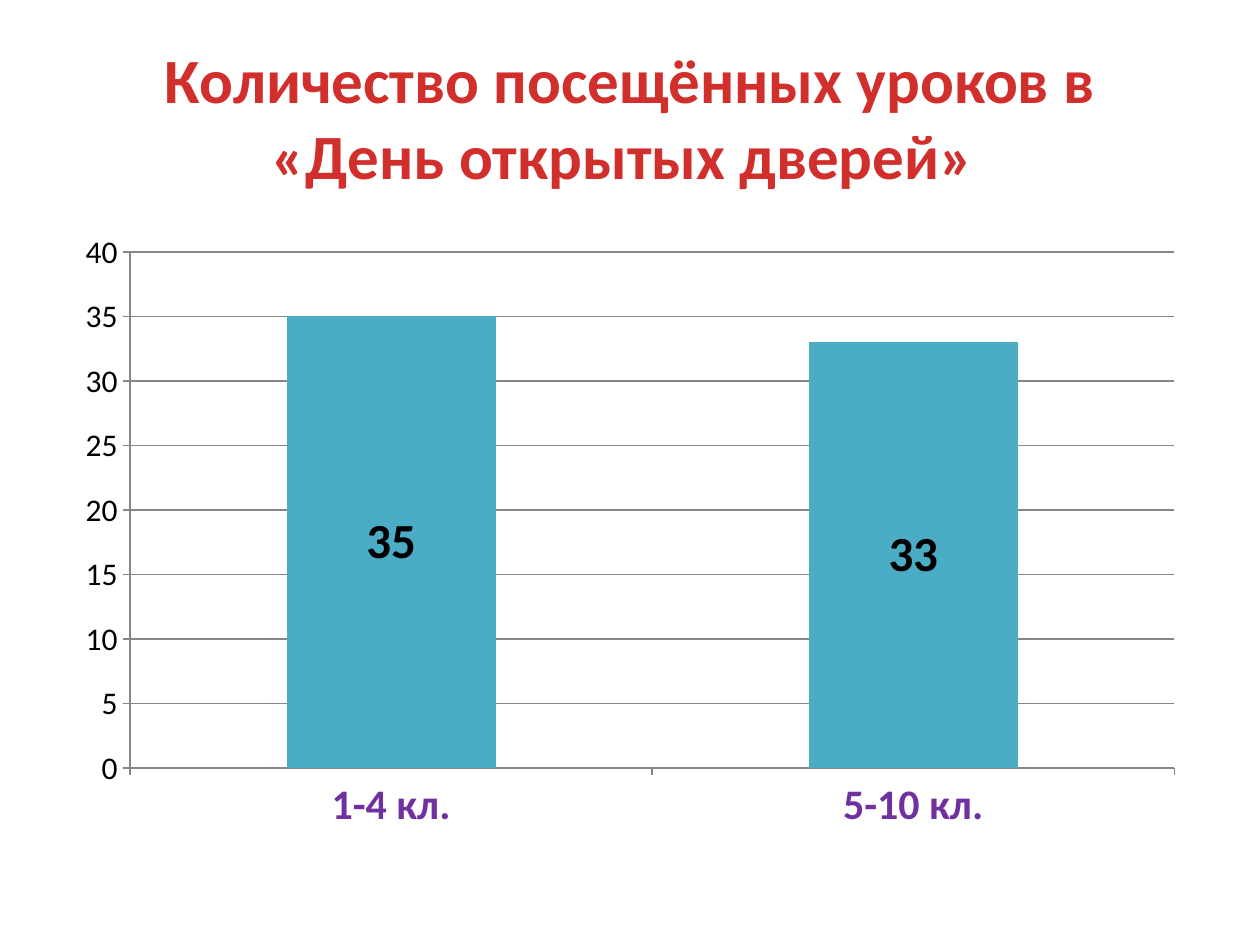
from pptx import Presentation
from pptx.chart.data import CategoryChartData
from pptx.dml.color import RGBColor
from pptx.enum.chart import XL_CHART_TYPE, XL_LABEL_POSITION, XL_TICK_MARK
from pptx.enum.text import MSO_ANCHOR, PP_ALIGN
from pptx.util import Inches, Pt

COLUMN_STACKED = XL_CHART_TYPE.COLUMN_STACKED
LABEL_CENTER = XL_LABEL_POSITION.CENTER
TICK_OUTSIDE = XL_TICK_MARK.OUTSIDE
MIDDLE = MSO_ANCHOR.MIDDLE
CENTER = PP_ALIGN.CENTER

FONT = "Calibri"
RED = RGBColor(0xD0, 0x2F, 0x2C)
TEAL = RGBColor(0x4B, 0xAC, 0xC6)
PURPLE = RGBColor(0x70, 0x30, 0xA0)
GRAY = RGBColor(0x86, 0x86, 0x86)
BLACK = RGBColor(0, 0, 0)


def style_font(font, size, color, bold=False):
    font.name = FONT
    font.size = Pt(size)
    font.bold = bold
    font.color.rgb = color


def style_line(line):
    line.color.rgb = GRAY
    line.width = Pt(0.75)


def add_title(page, text):
    title = page.shapes.title
    title.left, title.top = Inches(0.5), Inches(0.3)
    title.width, title.height = Inches(9), Inches(1.25)
    frame = title.text_frame
    frame.word_wrap = True
    frame.vertical_anchor = MIDDLE
    para = frame.paragraphs[0]
    para.alignment = CENTER
    span = para.add_run()
    span.text = text
    style_font(span.font, 36, RED, bold=True)


def style_axis(axis, size, color, bold=False):
    axis.major_tick_mark = TICK_OUTSIDE
    style_line(axis.format.line)
    style_font(axis.tick_labels.font, size, color, bold)


def add_lessons_chart(page, categories, values):
    data = CategoryChartData()
    data.categories = categories
    data.add_series("Series 1", values)
    chart = page.shapes.add_chart(
        COLUMN_STACKED, Inches(0.5), Inches(1.75), Inches(9), Inches(4.95), data
    ).chart
    chart.has_title = False
    chart.has_legend = False
    style_font(chart.font, 18, BLACK)

    style_axis(chart.category_axis, 24, PURPLE, bold=True)
    value_axis = chart.value_axis
    style_axis(value_axis, 18, BLACK)
    value_axis.minimum_scale = 0
    value_axis.maximum_scale = 40
    value_axis.major_unit = 5
    value_axis.has_major_gridlines = True
    style_line(value_axis.major_gridlines.format.line)

    plot = chart.plots[0]
    plot.gap_width = 150
    plot.overlap = 100
    plot.vary_by_categories = False
    series = plot.series[0]
    series.format.fill.solid()
    series.format.fill.fore_color.rgb = TEAL
    labels = series.data_labels
    labels.show_value = True
    labels.position = LABEL_CENTER
    style_font(labels.font, 28, BLACK, bold=True)


def main():
    deck = Presentation()
    deck.slide_width, deck.slide_height = Inches(10), Inches(7.5)
    page = deck.slides.add_slide(deck.slide_layouts[5])
    add_title(page, "Количество посещённых уроков в «День открытых дверей» ")
    add_lessons_chart(page, ["1-4 кл.", "5-10 кл."], [35, 33])
    deck.save("out.pptx")


if __name__ == "__main__":
    main()
